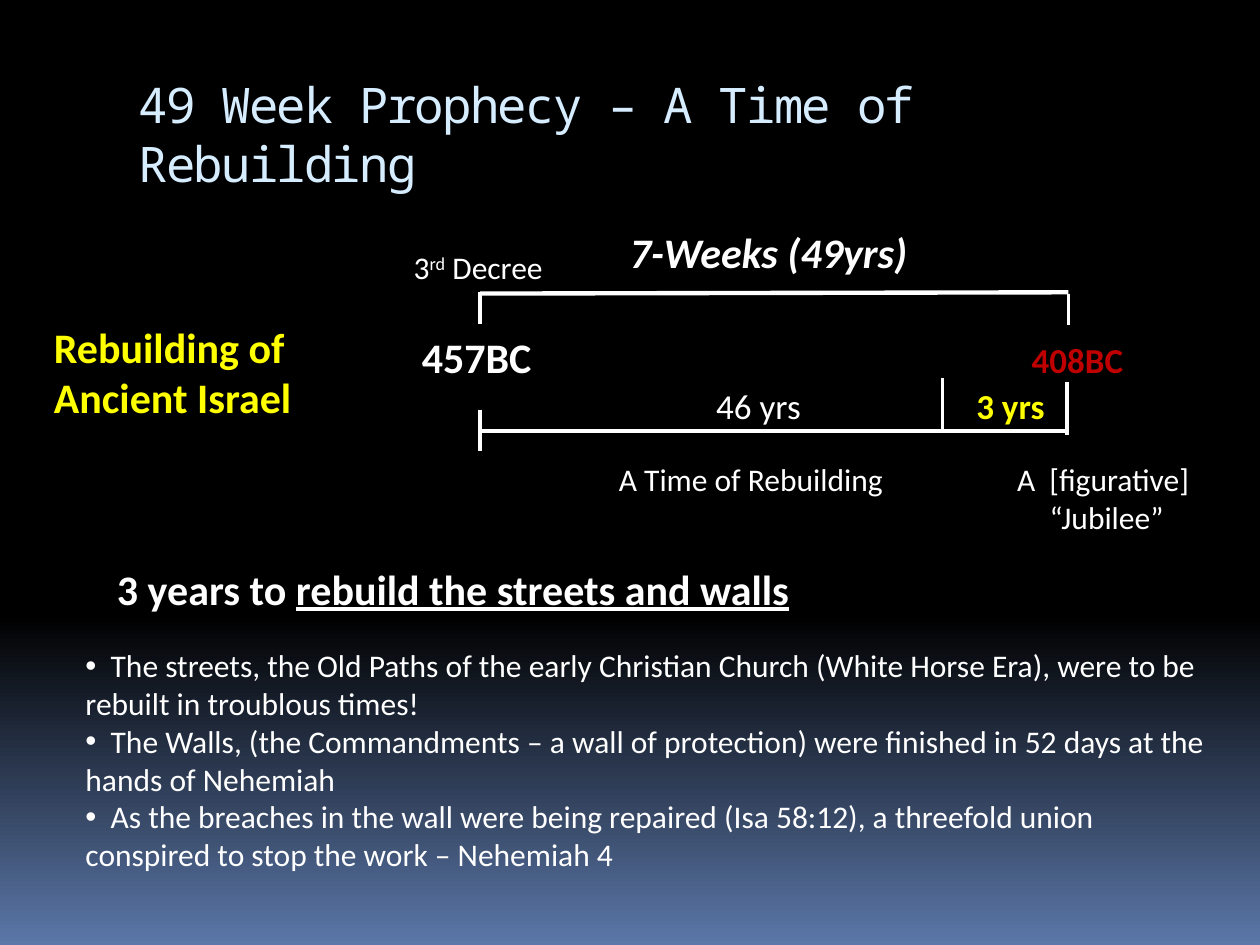
from lxml.etree import SubElement
from pptx import Presentation
from pptx.dml.color import RGBColor
from pptx.enum.shapes import MSO_CONNECTOR
from pptx.enum.text import MSO_ANCHOR, MSO_AUTO_SIZE, PP_ALIGN
from pptx.oxml.ns import qn
from pptx.util import Pt

PX = 9144  # 100 px to the inch
HUES = {"black": "000000", "blue": "5B77A8", "ice": "D6ECFF",
        "white": "FFFFFF", "yellow": "FFFF00", "red": "C00000"}
BODY = {"name": "Calibri", "size": Pt(18)}
MID = {**BODY, "size": Pt(20)}
BIG = {**BODY, "size": Pt(24), "bold": True}
CENTER = PP_ALIGN.CENTER


def hue(name):
    return RGBColor.from_string(HUES[name])


def add_run(para, text, style, color="white"):
    run = para.add_run()
    run.text = text
    for key, value in style.items():
        setattr(run.font, key, value)
    run.font.color.rgb = hue(color)
    return run


def add_text(slide, box, paras, style=BODY, color="white", align=None):
    """Add a text box; each paragraph is a list of (text, extra style) runs."""
    shape = slide.shapes.add_textbox(*(n * PX for n in box))
    frame = shape.text_frame
    frame.word_wrap = True
    frame.auto_size = MSO_AUTO_SIZE.SHAPE_TO_FIT_TEXT
    for i, runs in enumerate(paras):
        para = frame.add_paragraph() if i else frame.paragraphs[0]
        para.alignment = align
        for text, extra in runs:
            add_run(para, text, {**style, **extra}, color)
    return frame


def add_line(slide, x1, y1, x2, y2, width=2):
    line = slide.shapes.add_connector(
        MSO_CONNECTOR.STRAIGHT, *(n * PX for n in (x1, y1, x2, y2)))
    line.line.color.rgb = hue("white")
    line.line.width = Pt(width)
    SubElement(line._element.spPr, qn("a:effectLst"))


def paint_back(slide):
    fill = slide.background.fill
    fill.gradient()
    fill.gradient_angle = 270
    for stop, (spot, name) in zip(fill.gradient_stops,
                                  ((0.65, "black"), (1, "blue"))):
        stop.position = spot
        stop.color.rgb = hue(name)


def set_title(slide, box, text):
    title = slide.shapes.title
    for key, n in zip(("left", "top", "width", "height"), box):
        setattr(title, key, n * PX)
    frame = title.text_frame
    frame.word_wrap = True
    frame.auto_size = MSO_AUTO_SIZE.NONE
    frame.vertical_anchor = MSO_ANCHOR.MIDDLE
    para = frame.paragraphs[0]
    para.alignment = PP_ALIGN.LEFT
    run = add_run(para, text, {"name": "Noto Sans Mono", "size": Pt(28)}, "ice")
    run.font._element.set("spc", "-100")


def draw_span(slide, box):
    """Draw the upper and lower time bars with their ticks and labels."""
    x, y, w, h = box
    end, base = x + w, y + h
    bars = ((x, y + 1, end, y), (x, base, end, base))
    ticks = ((x, y, y + 25), (end, y + 1, y + 26), (x, base - 17, base + 16),
             (end - 1, base - 39, base + 3), (end - 100, base - 42, base))
    for bar in bars:
        add_line(slide, *bar, width=2.5)
    for tick, top, low in ticks:
        add_line(slide, tick, top, tick, low)

    labels = (
        ("7-Weeks (49yrs)", (109, -57, 258, 50), {**BIG, "italic": True},
         "white", None),
        ("457BC", (-56, 26, 115, 50), BIG, "white", None),
        ("408BC", (428, 32, 114, 44), {**MID, "bold": True}, "red", None),
        ("46 yrs", (175, 68, 92, 44), MID, "white", CENTER),
        ("3 yrs", (375, 68, 92, 44), {**MID, "bold": True}, "yellow", CENTER),
        ("A Time of Rebuilding", (94, 128, 242, 40), BODY, "white", CENTER),
    )
    for text, (dx, dy, wide, high), style, color, align in labels:
        add_text(slide, (x + dx, y + dy, wide, high), [[(text, {})]],
                 style, color, align)
    add_text(slide, (x + 411, y + 128, 167, 71),
             [[("A  [figurative]", {})], [(" “Jubilee”", {})]], align=CENTER)
    decree = add_text(slide, (x - 64, y - 40, 125, 40),
                      [[("3", {}), ("rd", {}), (" Decree", {})]], align=CENTER)
    decree.paragraphs[0].runs[1].font._element.set("baseline", "30000")


def add_points(slide, box, points):
    frame = add_text(slide, box, [[("  " + point, {})] for point in points])
    for para in frame.paragraphs:
        props = para._p.get_or_add_pPr()
        SubElement(props, qn("a:buFont"), typeface="Arial")
        SubElement(props, qn("a:buChar"), char="•")


def main():
    deck = Presentation()
    deck.slide_width, deck.slide_height = 1000 * PX, 750 * PX
    slide = deck.slides.add_slide(deck.slide_layouts[5])
    paint_back(slide)
    set_title(slide, (100, 56, 850, 100),
              "49 Week Prophecy – A Time of Rebuilding")
    draw_span(slide, (381, 232, 467, 110))
    add_text(slide, (33, 250, 258, 91),
             [[("Rebuilding of Ancient Israel", {})]], BIG, "yellow")
    add_text(slide, (83, 442, 625, 50),
             [[("3 years to ", {}),
               ("rebuild the streets and walls", {"underline": True})]], BIG)
    add_points(slide, (58, 508, 908, 192), (
        "The streets, the Old Paths of the early Christian Church "
        "(White Horse Era), were to be rebuilt in troublous times!",
        "The Walls, (the Commandments – a wall of protection) "
        "were finished in 52 days at the hands of Nehemiah",
        "As the breaches in the wall were being repaired (Isa 58:12), "
        "a threefold union conspired to stop the work – Nehemiah 4"))
    deck.save("out.pptx")


if __name__ == "__main__":
    main()
